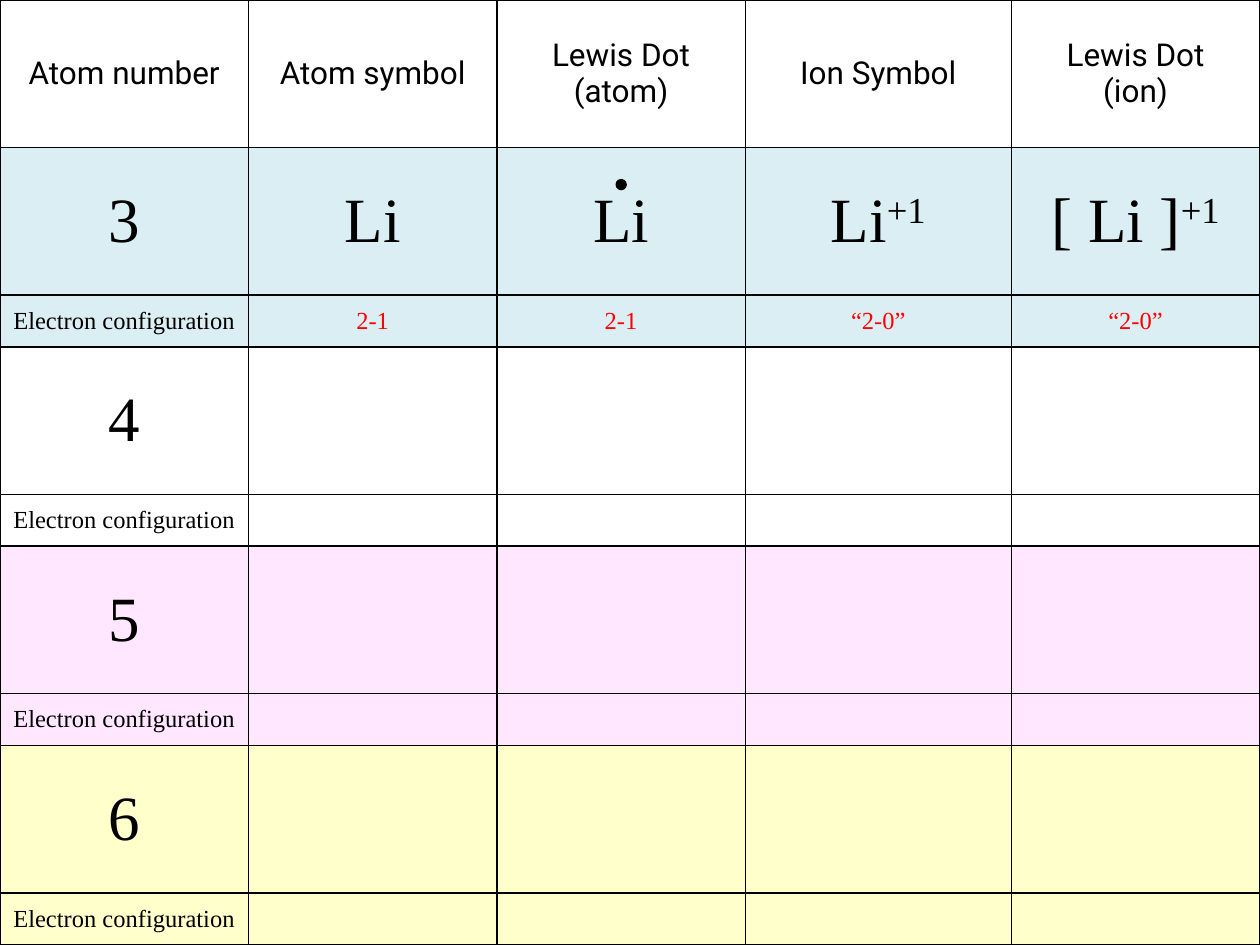
import pptx
import pptx.dml.color
import pptx.enum.shapes
import pptx.enum.text
import pptx.oxml
import pptx.oxml.ns
import pptx.util


def color(value):
    return pptx.dml.color.RGBColor.from_string(value)


class LewisSheet:
    BLACK = "000000"
    RED = "FF0000"
    HEADING = {"name": "Roboto", "size": pptx.util.Pt(18), "bold": False}
    ATOM = {"name": "Times New Roman", "size": pptx.util.Pt(36), "bold": False}
    CONFIGURATION = {**ATOM, "size": pptx.util.Pt(14)}
    CELL = {
        "vertical_anchor": pptx.enum.text.MSO_ANCHOR.MIDDLE,
        "margin_left": pptx.util.Inches(0.05),
        "margin_right": pptx.util.Inches(0.05),
        "margin_top": pptx.util.Inches(0.03),
        "margin_bottom": pptx.util.Inches(0.03),
    }

    def __init__(self, presentation):
        self.width = presentation.slide_width
        self.height = presentation.slide_height
        self.slide = presentation.slides.add_slide(presentation.slide_layouts[6])

    def apply(self, target, values):
        for name, value in values.items():
            setattr(target, name, value)

    def table(self, column_shares, row_shares):
        shape = self.slide.shapes.add_table(
            len(row_shares), len(column_shares), 0, 0, self.width, self.height
        )
        table = shape.table
        self.apply(table, {"first_row": False, "horz_banding": False})
        for column, share in zip(table.columns, column_shares):
            column.width = round(self.width * share / sum(column_shares))
        for row, share in zip(table.rows, row_shares):
            row.height = round(self.height * share / sum(row_shares))
        return table

    def borders(self, cell):
        properties = cell._tc.get_or_add_tcPr()
        for index, side in enumerate(("lnL", "lnR", "lnT", "lnB")):
            border = pptx.oxml.parse_xml(
                f'<a:{side} {pptx.oxml.ns.nsdecls("a")} w="12700"><a:solidFill>'
                f'<a:srgbClr val="{self.BLACK}"/></a:solidFill></a:{side}>'
            )
            properties.insert(index, border)

    def run(self, paragraph, text, font, text_color, baseline=None):
        run = paragraph.add_run()
        run.text = text
        self.apply(run.font, font)
        run.font.color.rgb = color(text_color)
        if baseline:
            run._r.get_or_add_rPr().set("baseline", baseline)

    def cell(self, cell, text, font, fill, text_color=BLACK):
        self.apply(cell, self.CELL)
        cell.fill.solid()
        cell.fill.fore_color.rgb = color(fill)
        self.borders(cell)
        paragraph = cell.text_frame.paragraphs[0]
        paragraph.alignment = pptx.enum.text.PP_ALIGN.CENTER
        if not text:
            return
        base, _, superscript = text.partition("^")
        for index, line in enumerate(base.split("\n")):
            if index:
                paragraph.add_line_break()
            self.run(paragraph, line, font, text_color)
        if superscript:
            self.run(paragraph, superscript, font, text_color, "30000")

    def row(self, table, index, texts, font, fill, value_color=BLACK):
        for column in range(len(table.columns)):
            text = texts[column] if column < len(texts) else ""
            text_color = value_color if column else self.BLACK
            self.cell(table.cell(index, column), text, font, fill, text_color)

    def electron(self, left, top, diameter):
        shape = self.slide.shapes.add_shape(
            pptx.enum.shapes.MSO_SHAPE.OVAL,
            round(self.width * left),
            round(self.height * top),
            round(self.width * diameter),
            round(self.width * diameter),
        )
        shape.shadow.inherit = False
        shape.fill.solid()
        shape.fill.fore_color.rgb = color(self.BLACK)
        shape.line.color.rgb = color(self.BLACK)
        shape.line.width = pptx.util.Pt(0.75)


def main():
    presentation = pptx.Presentation()
    presentation.slide_width = pptx.util.Inches(10)
    presentation.slide_height = pptx.util.Inches(7.5)
    sheet = LewisSheet(presentation)

    headings = [
        "Atom number",
        "Atom symbol",
        "Lewis Dot\n(atom)",
        "Ion Symbol",
        "Lewis Dot\n(ion)",
    ]
    atoms = [
        (["3", "Li", "Li", "Li^+1", "[ Li ]^+1"], ["2-1", "2-1", "“2-0”", "“2-0”"], "DBEEF4"),
        (["4"], [], "FFFFFF"),
        (["5"], [], "FFE7FF"),
        (["6"], [], "FFFFCC"),
    ]
    table = sheet.table(
        [1.97, 1.97, 1.97, 2.11, 1.97], [1.17] + [1.17, 0.41] * len(atoms)
    )
    sheet.row(table, 0, headings, sheet.HEADING, "FFFFFF")
    for index, (symbols, shells, fill) in enumerate(atoms):
        top_row = 1 + 2 * index
        configuration = ["Electron configuration"] + shells
        sheet.row(table, top_row, symbols, sheet.ATOM, fill)
        sheet.row(
            table, top_row + 1, configuration, sheet.CONFIGURATION, fill, sheet.RED
        )
    sheet.electron(0.489, 0.19, 0.008)
    presentation.save("out.pptx")


if __name__ == "__main__":
    main()
